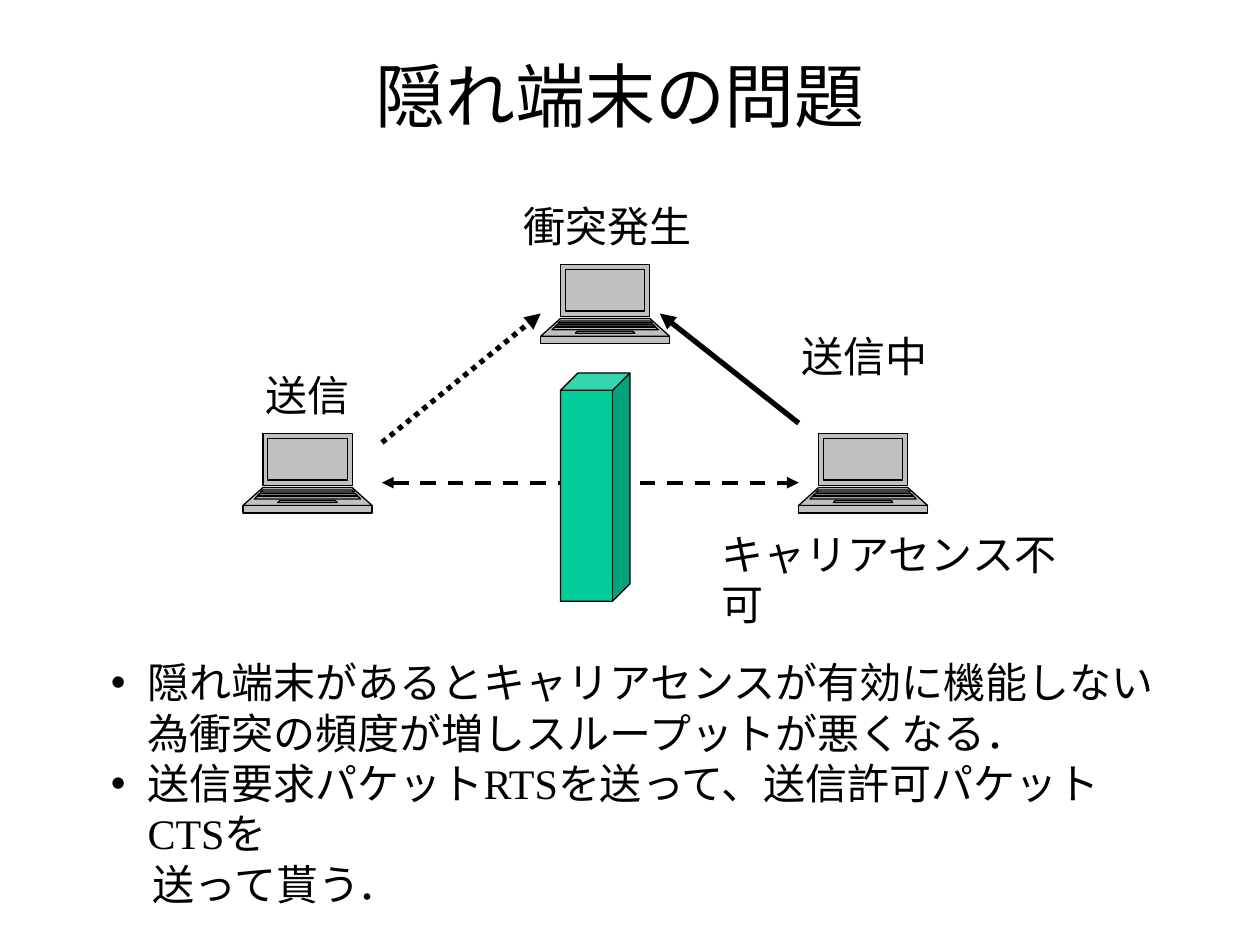
import pptx
import pptx.dml.color
import pptx.enum.dml
import pptx.enum.shapes
import pptx.enum.text
import pptx.oxml.ns
import pptx.util
from lxml import etree

Cm = pptx.util.Cm
Pt = pptx.util.Pt
Dash = pptx.enum.dml.MSO_LINE
qn = pptx.oxml.ns.qn

BLACK = pptx.dml.color.RGBColor(0x00, 0x00, 0x00)
SILVER = pptx.dml.color.RGBColor(0xC0, 0xC0, 0xC0)
GREEN = pptx.dml.color.RGBColor(0x00, 0xCC, 0x99)

# Laptop parts in 0.1 mm: top, half width at top, bottom, half width at bottom
LAPTOP_CENTER = 130
LAPTOP_PARTS = [
    (0, 90, 105, 90),       # lid
    (109, 90, 145, 130),    # keyboard deck
    (145, 130, 160, 130),   # front edge
    (10, 80, 94, 80),       # display
    (114, 90, 118, 95),     # key rows
    (121, 96, 125, 101),
    (127, 102, 132, 107),
    (135, 56, 139, 60),     # touch pad
]


class Diagram:
    font = "Times New Roman"
    title_size = Pt(40)
    text_size = Pt(24)
    outline = Pt(0.75)

    def __init__(self, slide):
        self.slide = slide
        self.shapes = slide.shapes

    def format_text(self, frame, size):
        for paragraph in frame.paragraphs:
            for run in paragraph.runs:
                run.font.name = self.font
                run.font.size = size
                run.font.color.rgb = BLACK

    def place(self, shape, left, top, width, height):
        shape.left, shape.top = Cm(left), Cm(top)
        shape.width, shape.height = Cm(width), Cm(height)

    def title(self, text, *box):
        heading = self.shapes.title
        self.place(heading, *box)
        heading.text_frame.text = text
        heading.text_frame.vertical_anchor = pptx.enum.text.MSO_ANCHOR.MIDDLE
        heading.text_frame.paragraphs[0].alignment = pptx.enum.text.PP_ALIGN.CENTER
        self.format_text(heading.text_frame, self.title_size)

    def bullets(self, items, *box):
        """Fill the body with (text, has bullet) items."""
        body = self.slide.placeholders[1]
        self.place(body, *box)
        frame = body.text_frame
        frame.auto_size = pptx.enum.text.MSO_AUTO_SIZE.NONE
        frame.margin_right = Cm(0.1)
        frame.text = "\n".join(text for text, _ in items)
        for paragraph, (_, bulleted) in zip(frame.paragraphs, items):
            paragraph.space_before = Pt(0)
            properties = paragraph._p.get_or_add_pPr()
            properties.set("marL", str(Cm(0.74 if bulleted else 0.85)))
            properties.set("indent", str(Cm(-0.74 if bulleted else 0)))
            if bulleted:
                etree.SubElement(properties, qn("a:buChar")).set("char", "•")
            else:
                etree.SubElement(properties, qn("a:buNone"))
        self.format_text(frame, self.text_size)

    def label(self, text, left, top, width, wrap=False):
        frame = self.shapes.add_textbox(Cm(left), Cm(top), Cm(width), Cm(1.27)).text_frame
        frame.word_wrap = wrap
        frame.text = text
        self.format_text(frame, self.text_size)

    def paint(self, shape, color):
        shape.shadow.inherit = False
        shape.fill.solid()
        shape.fill.fore_color.rgb = color
        shape.line.color.rgb = BLACK
        shape.line.width = self.outline

    def wall(self, left, top, width, height):
        cube = self.shapes.add_shape(
            pptx.enum.shapes.MSO_SHAPE.CUBE, Cm(left), Cm(top), Cm(width), Cm(height))
        self.paint(cube, GREEN)

    def laptop(self, left, top):
        builder = None
        for upper, upper_half, lower, lower_half in LAPTOP_PARTS:
            start = (LAPTOP_CENTER - upper_half, upper)
            if builder is None:
                builder = self.shapes.build_freeform(*start, scale=Cm(0.01))
            else:
                builder.move_to(*start)
            builder.add_line_segments([
                (LAPTOP_CENTER + upper_half, upper),
                (LAPTOP_CENTER + lower_half, lower),
                (LAPTOP_CENTER - lower_half, lower),
            ], close=True)
        computer = builder.convert_to_shape(Cm(left), Cm(top))
        self.paint(computer, SILVER)
        self.split_contours(computer)

    def split_contours(self, shape):
        """Give each contour its own path, so that overlaps stay filled."""
        joined = next(shape._element.iter(qn("a:path")))
        path_list = joined.getparent()
        path_list.remove(joined)
        for step in list(joined):
            if step.tag == qn("a:moveTo"):
                contour = etree.SubElement(path_list, qn("a:path"))
                contour.set("w", joined.get("w"))
                contour.set("h", joined.get("h"))
            contour.append(step)

    def arrow(self, start, end, width, dash=None, both_ends=False):
        connector = self.shapes.add_connector(
            pptx.enum.shapes.MSO_CONNECTOR.STRAIGHT, *map(Cm, start + end))
        connector.line.color.rgb = BLACK
        connector.line.width = Pt(width)
        if dash is not None:
            connector.line.dash_style = dash
        properties = connector._element.spPr
        line = properties.find(qn("a:ln"))
        for tag in ["a:headEnd", "a:tailEnd"] if both_ends else ["a:tailEnd"]:
            etree.SubElement(line, qn(tag)).set("type", "triangle")
        etree.SubElement(properties, qn("a:effectLst"))


def main():
    deck = pptx.Presentation()
    deck.slide_width, deck.slide_height = Cm(25.4), Cm(19.05)
    diagram = Diagram(deck.slides.add_slide(deck.slide_layouts[1]))

    diagram.title("隠れ端末の問題", 1.7, 0.7, 21.6, 2.4)
    diagram.bullets([
        ("隠れ端末があるとキャリアセンスが有効に機能しない為衝突の頻度が増しスループットが悪くなる．", True),
        ("送信要求パケットRTSを送って、送信許可パケットCTSを", True),
        ("送って貰う．", False),
    ], 1.98, 13.11, 21.51, 5.3)

    diagram.arrow((7.7, 9.73), (16.1, 9.73), 2.25, Dash.DASH, both_ends=True)
    diagram.arrow((7.7, 8.92), (10.9, 6.32), 3, Dash.ROUND_DOT)
    diagram.arrow((16.1, 8.53), (13.3, 6.32), 3)
    diagram.wall(11.3, 7.52, 1.4, 4.6)

    for left, top in [(10.9, 5.33), (4.9, 8.74), (16.1, 8.74)]:
        diagram.laptop(left, top)

    diagram.label("送信", 5.1, 7.32, 2.2)
    diagram.label("送信中", 15.9, 6.53, 3.05)
    diagram.label("衝突発生", 10.3, 3.92, 3.9)
    diagram.label("キャリアセンス不可", 14.3, 10.52, 7.45, wrap=True)

    deck.save("out.pptx")


if __name__ == "__main__":
    main()
